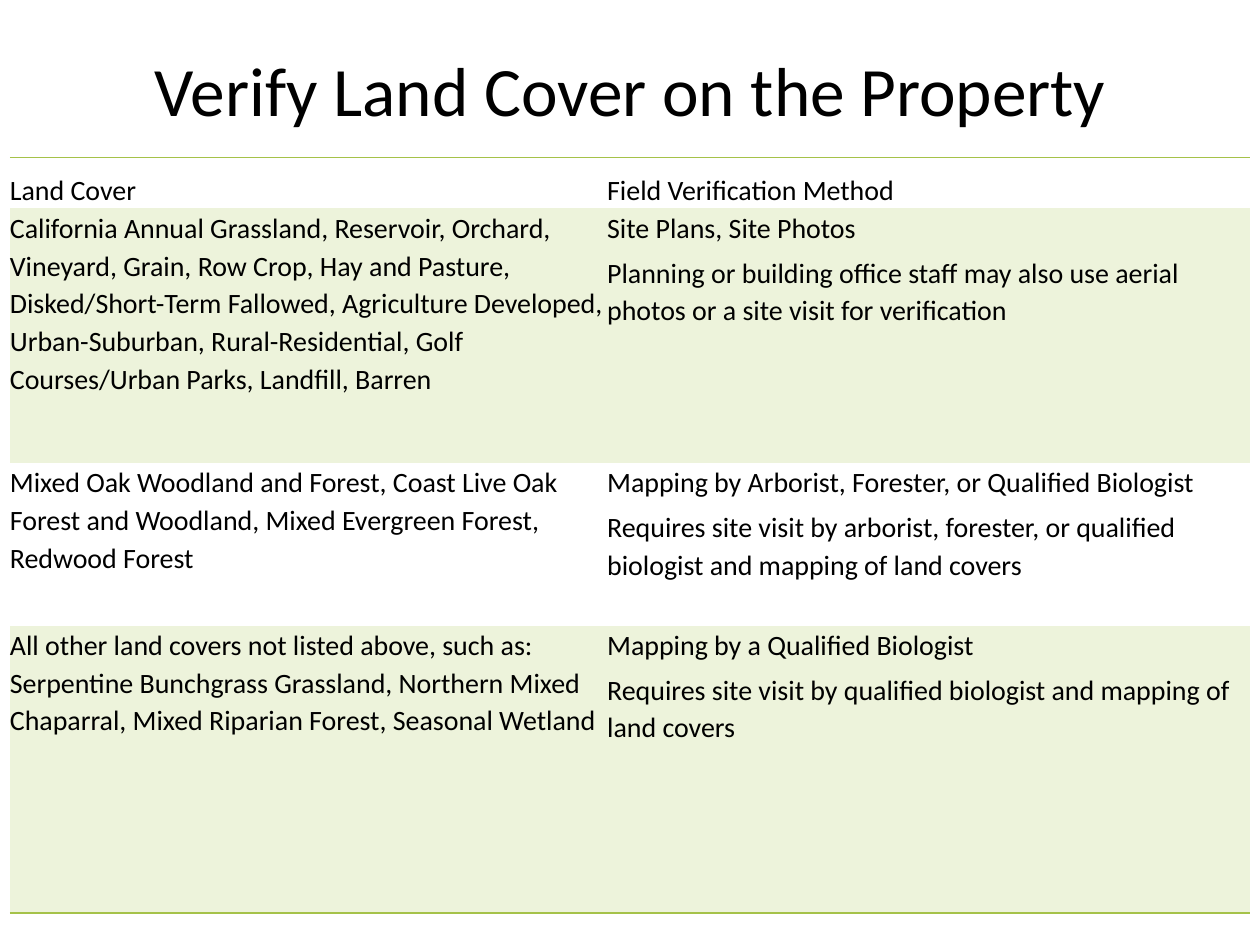
from lxml import etree
from pptx import Presentation
from pptx.dml.color import RGBColor
from pptx.enum.text import MSO_ANCHOR as Anchor, PP_ALIGN as Align
from pptx.oxml.ns import qn
from pptx.util import Cm, Pt

NO_STYLE = "{2D5ABB26-0587-4C30-8999-92F81FD0307C}"


def rgb(value):
    return RGBColor.from_string(value)


class Deck:
    font, ink, band, rule = "Calibri", "000000", "EDF3DB", "A5C249"

    def __init__(self, width, height):
        self.prs = Presentation()
        self.prs.slide_width, self.prs.slide_height = Cm(width), Cm(height)
        self.s = self.prs.slides.add_slide(self.prs.slide_layouts[6])

    def style(self, p, size):
        for r in p.runs:
            r.font.name, r.font.size = self.font, Pt(size)
            r.font.color.rgb = rgb(self.ink)

    def clear_margins(self, box):
        box.margin_left = box.margin_right = 0
        box.margin_top = box.margin_bottom = 0

    def title(self, text, left, top, width, height, size):
        tf = self.s.shapes.add_textbox(
            Cm(left), Cm(top), Cm(width), Cm(height)).text_frame
        self.clear_margins(tf)
        tf.word_wrap = True
        tf.vertical_anchor = Anchor.MIDDLE
        tf.text = text
        tf.paragraphs[0].alignment = Align.CENTER
        self.style(tf.paragraphs[0], size)

    def border(self, cell, side):
        line = etree.Element(qn(f"a:{side}"), w=str(Pt(1)))
        fill = etree.SubElement(line, qn("a:solidFill"))
        etree.SubElement(fill, qn("a:srgbClr"), val=self.rule)
        cell._tc.get_or_add_tcPr().insert(0, line)

    def cell(self, cell, text, size, banded):
        self.clear_margins(cell)
        cell.text_frame.text = text
        for i, p in enumerate(cell.text_frame.paragraphs):
            p.line_spacing = 1.1
            p.space_before, p.space_after = Pt(2 if i else 0), Pt(2)
            self.style(p, size)
        if banded:
            cell.fill.solid()
            cell.fill.fore_color.rgb = rgb(self.band)
        else:
            cell.fill.background()

    def table(self, rows, left, top, widths, heights, size):
        frame = self.s.shapes.add_table(
            len(rows), len(widths), Cm(left), Cm(top),
            Cm(sum(widths)), Cm(sum(heights)))
        next(frame.element.iter(qn("a:tableStyleId"))).text = NO_STYLE
        table = frame.table
        table.horz_banding = False
        for column, width in zip(table.columns, widths):
            column.width = Cm(width)
        for i, (row, texts) in enumerate(zip(table.rows, rows)):
            row.height = Cm(heights[i])
            for cell, text in zip(row.cells, texts):
                self.cell(cell, text, size, banded=i % 2 == 1)
                if i == 0:
                    cell.vertical_anchor = Anchor.BOTTOM
                    self.border(cell, "lnT")
                elif i == len(rows) - 1:
                    self.border(cell, "lnB")


# Land covers and how each group is verified
ROWS = [
    ("Land Cover", "Field Verification Method"),
    ("California Annual Grassland, Reservoir, Orchard, Vineyard, Grain, "
     "Row Crop, Hay and Pasture, Disked/Short-Term Fallowed, Agriculture "
     "Developed, Urban-Suburban, Rural-Residential, Golf Courses/Urban Parks, "
     "Landfill, Barren",
     "Site Plans, Site Photos\n"
     "Planning or building office staff may also use aerial photos or a site "
     "visit for verification"),
    ("Mixed Oak Woodland and Forest, Coast Live Oak Forest and Woodland, "
     "Mixed Evergreen Forest, Redwood Forest",
     "Mapping by Arborist, Forester, or Qualified Biologist\n"
     "Requires site visit by arborist, forester, or qualified biologist and "
     "mapping of land covers"),
    ("All other land covers not listed above, such as: Serpentine Bunchgrass "
     "Grassland, Northern Mixed Chaparral, Mixed Riparian Forest, "
     "Seasonal Wetland",
     "Mapping by a Qualified Biologist\n"
     "Requires site visit by qualified biologist and mapping of land covers"),
]


def main():
    deck = Deck(25.4, 19.05)
    # Heading
    deck.title("Verify Land Cover on the Property", 2.69, 0.2, 20.04, 3.18, 39.6)
    # Verification table
    deck.table(ROWS, 0.2, 3.18, [12.04, 12.95], [1.02, 5.13, 3.28, 5.79], 16)
    deck.prs.save("out.pptx")


if __name__ == "__main__":
    main()
